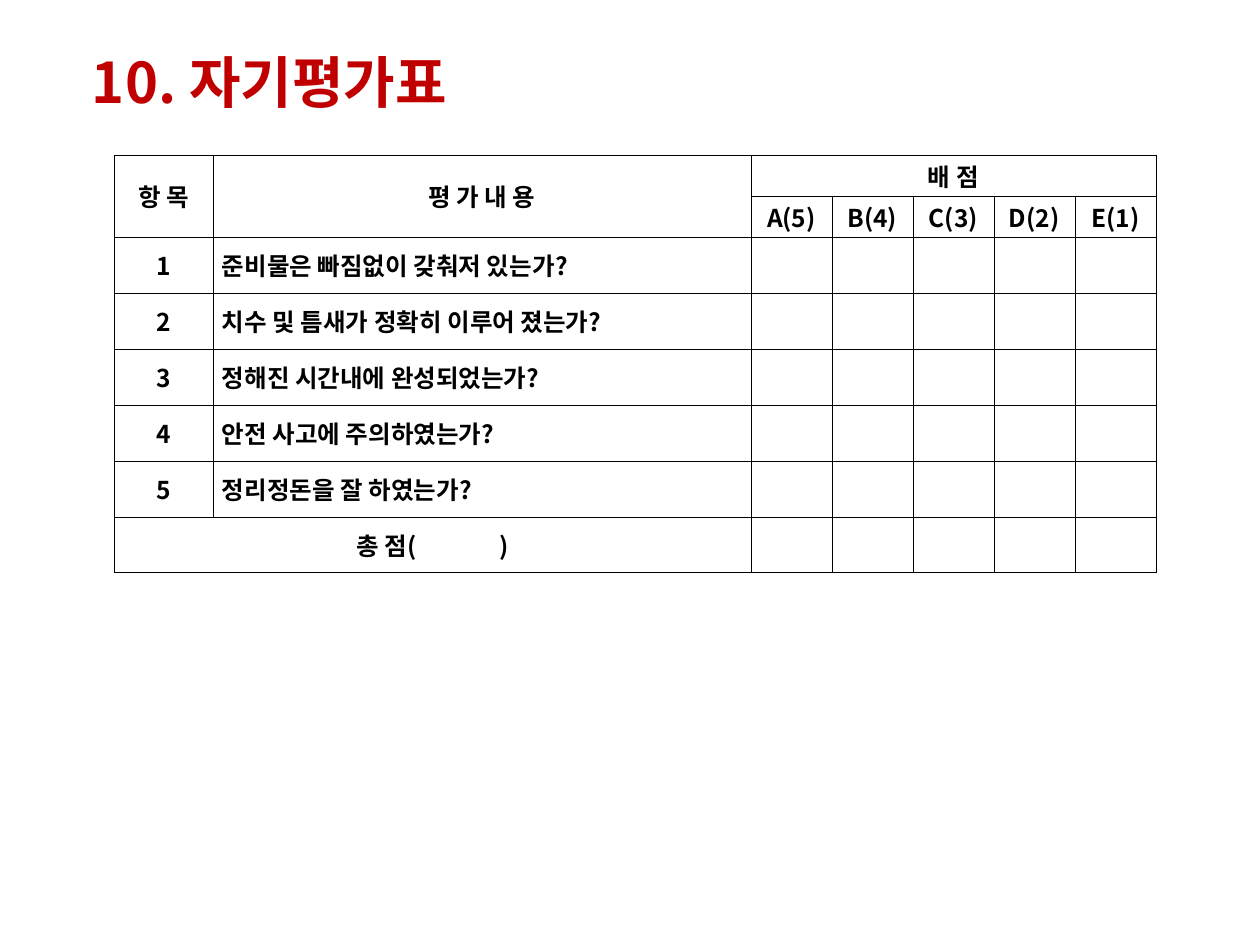
from lxml.etree import SubElement
from pptx import Presentation
from pptx.dml.color import RGBColor
from pptx.enum.text import MSO_ANCHOR as Anchor, PP_ALIGN as Align
from pptx.oxml.ns import qn
from pptx.util import Emu, Pt

FONT = "Noto Sans CJK KR"
COLORS = {"title": "C00000", "text": "000000", "border": "000000"}


def px(value):
    return Emu(round(value * 914400 / 126))


def add_text(para, text, size=14, color="text", align=Align.CENTER, spacing=0):
    para.alignment = align
    span = para.add_run()
    span.text = text
    span.font.size = Pt(size)
    span.font.bold = True
    span.font.color.rgb = RGBColor.from_string(COLORS[color])
    span.font.name = FONT
    props = span.font._element
    SubElement(props, qn("a:ea"), typeface=FONT)
    if spacing:
        props.set("spc", str(spacing * 100))


deck = Presentation()
deck.slide_width = px(1260)
deck.slide_height = px(945)
page = deck.slides.add_slide(deck.slide_layouts[6])

title = page.shapes.add_textbox(px(54), px(36), px(1134), px(90))
frame = title.text_frame
frame.word_wrap = True
frame.vertical_anchor = Anchor.MIDDLE
frame.margin_left = px(38)
add_text(frame.paragraphs[0], "10. 자기평가표", size=32, color="title", align=Align.LEFT)

widths = [99, 538] + [81] * 5
heights = [41] * 2 + [56] * 6
table = page.shapes.add_table(
    len(heights), len(widths), px(114), px(155), px(sum(widths)), px(sum(heights))
).table
table.first_row = False
table.horz_banding = False
for column, width in zip(table.columns, widths):
    column.width = px(width)
for row, height in zip(table.rows, heights):
    row.height = px(height)

for cell in table.iter_cells():
    cell.vertical_anchor = Anchor.MIDDLE
    cell.margin_left = cell.margin_right = px(9)
    cell.margin_top = cell.margin_bottom = px(2)
    for side in ("a:lnL", "a:lnR", "a:lnT", "a:lnB"):
        border = SubElement(cell._tc.get_or_add_tcPr(), qn(side), w=str(Pt(0.28)))
        fill = SubElement(border, qn("a:solidFill"))
        SubElement(fill, qn("a:srgbClr"), val=COLORS["border"])
    cell.fill.background()

last = len(heights) - 1
for first, end in [((0, 0), (1, 0)), ((0, 1), (1, 1)), ((0, 2), (0, 6)), ((last, 0), (last, 1))]:
    table.cell(*first).merge(table.cell(*end))

for column, heading in enumerate(["항 목", "평 가 내 용", "배 점"]):
    add_text(table.cell(0, column).text_frame.paragraphs[0], heading)
for column, grade in enumerate(["A(5)", "B(4)", "C(3)", "D(2)", "E(1)"], start=2):
    add_text(table.cell(1, column).text_frame.paragraphs[0], grade)

questions = [
    "준비물은 빠짐없이 갖춰저 있는가?",
    "치수 및 틈새가 정확히 이루어 졌는가?",
    "정해진 시간내에 완성되었는가?",
    "안전 사고에 주의하였는가?",
    "정리정돈을 잘 하였는가?",
]
for number, question in enumerate(questions, start=1):
    add_text(table.cell(number + 1, 0).text_frame.paragraphs[0], str(number))
    add_text(table.cell(number + 1, 1).text_frame.paragraphs[0], question, align=Align.JUSTIFY)

total = table.cell(last, 0).text_frame.paragraphs[0]
for text, spacing in [("총 점(", 0), (" ", 44), (")", 0)]:
    add_text(total, text, spacing=spacing)

deck.save("out.pptx")
